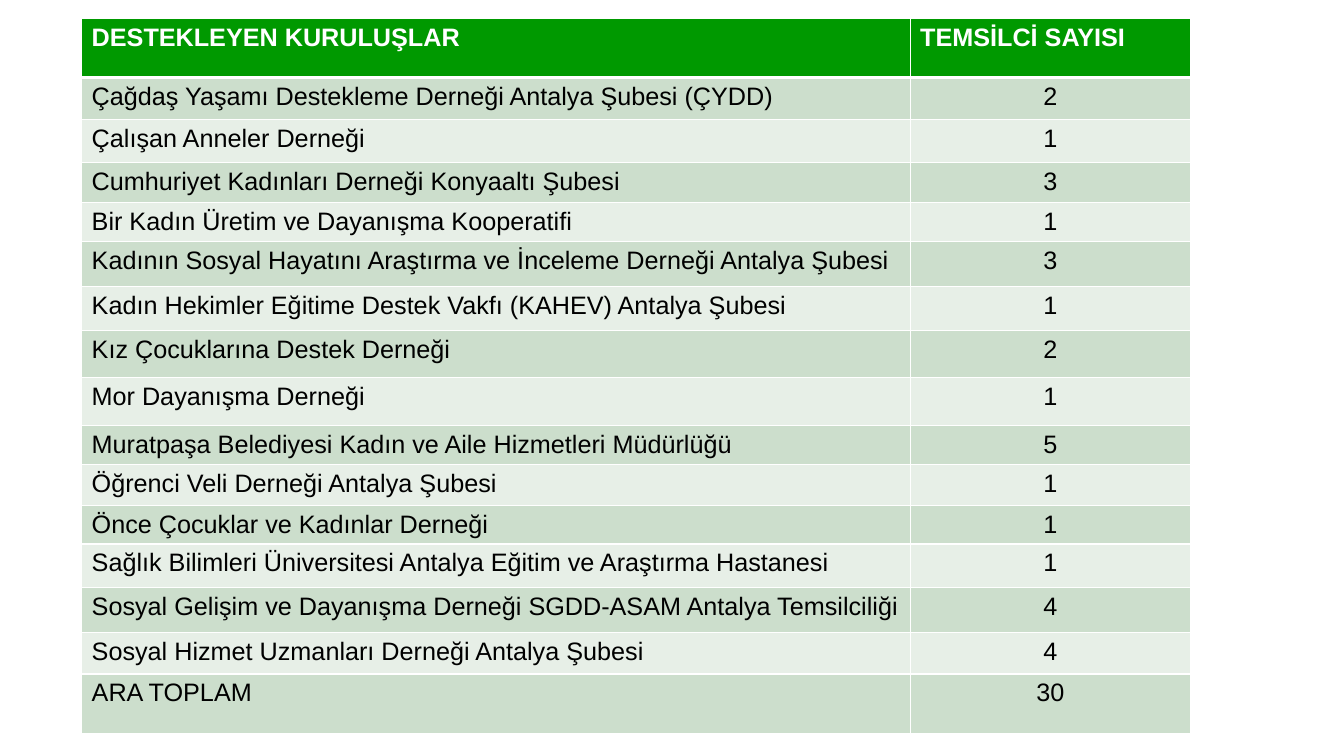
from dataclasses import dataclass

from lxml.etree import SubElement
from pptx import Presentation
from pptx.dml.color import RGBColor
from pptx.enum.text import PP_ALIGN
from pptx.oxml.ns import qn
from pptx.util import Inches, Pt


@dataclass(frozen=True)
class Theme:
    font: str = "Arial"
    text_size: int = 18
    header_fill: str = "009900"
    header_text: str = "FFFFFF"
    body_text: str = "000000"
    bands: tuple = ("CCDECC", "E7EFE7")
    border: str = "FFFFFF"
    thin: int = 1
    thick: int = 3


THEME = Theme()

HEADER = ("DESTEKLEYEN KURULUŞLAR", "TEMSİLCİ SAYISI")
HEADER_HEIGHT = TOTAL_HEIGHT = 0.59
COLUMN_SHARES = (0.747, 0.253)

# Organisation, number of representatives, row height in inches
SUPPORTERS = [
    ("Çağdaş Yaşamı Destekleme Derneği Antalya Şubesi (ÇYDD)", 2, 0.42),
    ("Çalışan Anneler Derneği", 1, 0.42),
    ("Cumhuriyet Kadınları Derneği Konyaaltı Şubesi", 3, 0.4),
    ("Bir Kadın Üretim ve Dayanışma Kooperatifi", 1, 0.39),
    ("Kadının Sosyal Hayatını Araştırma ve İnceleme Derneği Antalya Şubesi", 3, 0.44),
    ("Kadın Hekimler Eğitime Destek Vakfı (KAHEV) Antalya Şubesi", 1, 0.44),
    ("Kız Çocuklarına Destek Derneği", 2, 0.47),
    ("Mor Dayanışma Derneği", 1, 0.47),
    ("Muratpaşa Belediyesi Kadın ve Aile Hizmetleri Müdürlüğü", 5, 0.39),
    ("Öğrenci Veli Derneği Antalya Şubesi", 1, 0.41),
    ("Önce Çocuklar ve Kadınlar Derneği", 1, 0.38),
    ("Sağlık Bilimleri Üniversitesi Antalya Eğitim ve Araştırma Hastanesi", 1, 0.43),
    ("Sosyal Gelişim ve Dayanışma Derneği SGDD-ASAM Antalya Temsilciliği", 4, 0.45),
    ("Sosyal Hizmet Uzmanları Derneği Antalya Şubesi", 4, 0.41),
]


def set_borders(cell, top, bottom):
    """Draw the four cell borders; must run before the cell is filled."""
    properties = cell._tc.get_or_add_tcPr()
    widths = {"L": THEME.thin, "R": THEME.thin, "T": top, "B": bottom}
    for side, width in widths.items():
        line = SubElement(properties, qn(f"a:ln{side}"), w=str(Pt(width)))
        fill = SubElement(line, qn("a:solidFill"))
        SubElement(fill, qn("a:srgbClr"), val=THEME.border)


def style_cell(cell, text, fill, color, bold, alignment):
    cell.fill.solid()
    cell.fill.fore_color.rgb = RGBColor.from_string(fill)
    cell.text_frame.text = text
    paragraph = cell.text_frame.paragraphs[0]
    paragraph.alignment = alignment
    font = paragraph.runs[0].font
    font.name = THEME.font
    font.size = Pt(THEME.text_size)
    font.bold = bold
    font.color.rgb = RGBColor.from_string(color)


def add_supporters_table(slide, left, top, width):
    total = sum(count for _, count, _ in SUPPORTERS)
    rows = [(*HEADER, HEADER_HEIGHT), *SUPPORTERS, ("ARA TOPLAM", total, TOTAL_HEIGHT)]
    height = sum(row[2] for row in rows)
    table = slide.shapes.add_table(
        len(rows), len(HEADER), Inches(left), Inches(top), Inches(width), Inches(height)
    ).table
    for column, share in zip(table.columns, COLUMN_SHARES):
        column.width = Inches(width * share)

    for row_index, (name, count, row_height) in enumerate(rows):
        table.rows[row_index].height = Inches(row_height)
        is_header = row_index == 0
        fill = THEME.header_fill if is_header else THEME.bands[(row_index - 1) % 2]
        color = THEME.header_text if is_header else THEME.body_text
        for column_index, value in enumerate((name, count)):
            cell = table.cell(row_index, column_index)
            set_borders(
                cell,
                top=THEME.thick if row_index == 1 else THEME.thin,
                bottom=THEME.thick if is_header else THEME.thin,
            )
            centered = column_index == 1 and not is_header
            alignment = PP_ALIGN.CENTER if centered else PP_ALIGN.LEFT
            style_cell(cell, str(value), fill, color, is_header, alignment)


def main():
    presentation = Presentation()
    presentation.slide_width = Inches(13.33)
    presentation.slide_height = Inches(7.5)
    slide = presentation.slides.add_slide(presentation.slide_layouts[6])
    add_supporters_table(slide, left=0.81, top=0.18, width=11)
    presentation.save("out.pptx")


if __name__ == "__main__":
    main()
